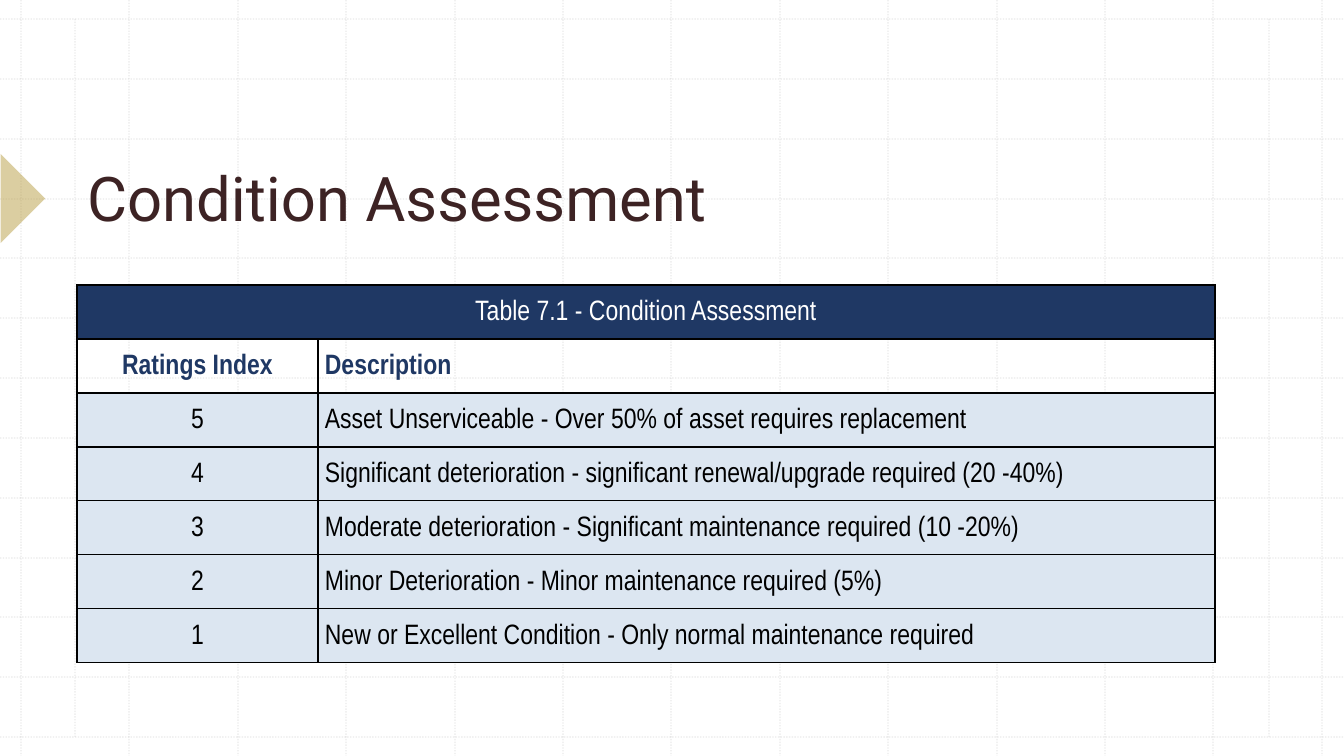
"""Builds the condition assessment slide with its ratings table."""
import lxml.etree
import pptx
import pptx.dml.color
import pptx.enum.dml
import pptx.enum.shapes
import pptx.enum.text
import pptx.oxml.ns
import pptx.util

RGB = pptx.dml.color.RGBColor
GRID = RGB(0xBC, 0xBC, 0xBC)
GOLD = RGB(0xB9, 0x9E, 0x44)
BROWN = RGB(0x3D, 0x23, 0x24)
NAVY = RGB(0x1F, 0x38, 0x64)
PALE = RGB(0xDC, 0xE6, 0xF1)
WHITE = RGB(0xFF, 0xFF, 0xFF)
BLACK = RGB(0, 0, 0)
ALIGN = pptx.enum.text.PP_ALIGN
ANCHOR = pptx.enum.text.MSO_ANCHOR
Pt = pptx.util.Pt
qn = pptx.oxml.ns.qn

WIDTH, HEIGHT = 1344, 756
ROWS = [
    ("Table 7.1 - Condition Assessment", ""),
    ("Ratings Index", "Description"),
    ("5", "Asset Unserviceable - Over 50% of asset requires replacement"),
    ("4", "Significant deterioration - significant renewal/upgrade required (20 -40%)"),
    ("3", "Moderate deterioration - Significant maintenance required (10 -20%)"),
    ("2", "Minor Deterioration - Minor maintenance required (5%)"),
    ("1", "New or Excellent Condition - Only normal maintenance required"),
]


def px(n):
    return round(n * 914400 / 100.8)


def assign(obj, **values):
    for name, value in values.items():
        setattr(obj, name, value)


def set_alpha(sp, percent):
    for clr in sp._element.spPr.iter(qn("a:srgbClr")):
        lxml.etree.SubElement(clr, qn("a:alpha"), val=str(percent * 1000))


class Deck:
    def __init__(self):
        self.prs = pptx.Presentation()
        assign(self.prs, slide_width=px(WIDTH), slide_height=px(HEIGHT))
        self.s = self.prs.slides.add_slide(self.prs.slide_layouts[5])
        assign(self.s.background.fill, **{})
        self.s.background.fill.solid()
        self.s.background.fill.fore_color.rgb = WHITE

    def text(self, tf, text, font, size, color, bold=False, **paragraph):
        p = tf.paragraphs[0]
        assign(p, **paragraph)
        r = p.add_run()
        r.text = text
        assign(r.font, name=font, size=Pt(size), bold=bold)
        r.font.color.rgb = color

    def grid_line(self, x1, y1, x2, y2):
        sp = self.s.shapes.add_connector(
            pptx.enum.shapes.MSO_CONNECTOR.STRAIGHT, px(x1), px(y1), px(x2), px(y2))
        sp.line.color.rgb = GRID
        assign(sp.line, width=Pt(1), dash_style=pptx.enum.dml.MSO_LINE.ROUND_DOT)
        set_alpha(sp, 30)
        lxml.etree.SubElement(sp._element.spPr, qn("a:effectLst"))

    def marker(self, x, y, size):
        sp = self.s.shapes.add_shape(
            pptx.enum.shapes.MSO_SHAPE.RIGHT_TRIANGLE, px(x), px(y), px(size), px(size))
        sp.rotation = 225
        sp.shadow.inherit = False
        sp.fill.solid()
        sp.fill.fore_color.rgb = GOLD
        sp.line.fill.background()
        set_alpha(sp, 50)

    def title(self, text, x, y, w, h):
        sp = self.s.shapes.title
        self.s.shapes._spTree.append(sp._element)
        assign(sp, left=px(x), top=px(y), width=px(w), height=px(h))
        assign(sp.text_frame, vertical_anchor=ANCHOR.BOTTOM, word_wrap=True,
               auto_size=pptx.enum.text.MSO_AUTO_SIZE.NONE)
        self.text(sp.text_frame, text, "Roboto", 44, BROWN, alignment=ALIGN.LEFT)

    def cell(self, cell, text, color, fill, bold, align):
        assign(cell, margin_left=px(7), margin_right=px(7), margin_top=0,
               margin_bottom=0, vertical_anchor=ANCHOR.MIDDLE)
        for side in ("lnL", "lnR", "lnT", "lnB"):
            ln = lxml.etree.SubElement(cell._tc.get_or_add_tcPr(), qn(f"a:{side}"), w="12700")
            solid = lxml.etree.SubElement(ln, qn("a:solidFill"))
            lxml.etree.SubElement(solid, qn("a:srgbClr"), val=str(BLACK))
        if fill is None:
            cell.fill.background()
        else:
            cell.fill.solid()
            cell.fill.fore_color.rgb = fill
        if text:
            self.text(cell.text_frame, text, "Arial Narrow", 20, color, bold, alignment=align,
                      line_spacing=1.07, space_before=Pt(4), space_after=Pt(4))

    def table(self, rows, x, y, widths, row_height):
        table = self.s.shapes.add_table(
            len(rows), len(widths), px(x), px(y),
            px(sum(widths)), px(row_height * len(rows))).table
        assign(table, first_row=False, horz_banding=False)
        for column, width in zip(table.columns, widths):
            column.width = px(width)
        table.cell(0, 0).merge(table.cell(0, len(widths) - 1))
        styles = [(WHITE, NAVY, False), (NAVY, None, True)]
        for i, row in enumerate(rows):
            table.rows[i].height = px(row_height)
            style = styles[i] if i < len(styles) else (BLACK, PALE, False)
            for j, text in enumerate(row):
                self.cell(table.cell(i, j), text, *style, ALIGN.LEFT if j else ALIGN.CENTER)


def main():
    deck = Deck()
    for i in range(13):
        x, y = 21 + round(i * 108.4), 19 + round(i * 59.85)
        deck.grid_line(x, 0, x, HEIGHT)
        deck.grid_line(0, y, WIDTH, y)
    for x in (75, 1269):
        deck.grid_line(x, 19, x, 737)
    deck.marker(-31, 167, 63)
    deck.title("Condition Assessment", 77, 80, 1138, 159)
    deck.table(ROWS, 77, 285, (241, 897), 54)
    deck.prs.save("out.pptx")


if __name__ == "__main__":
    main()
